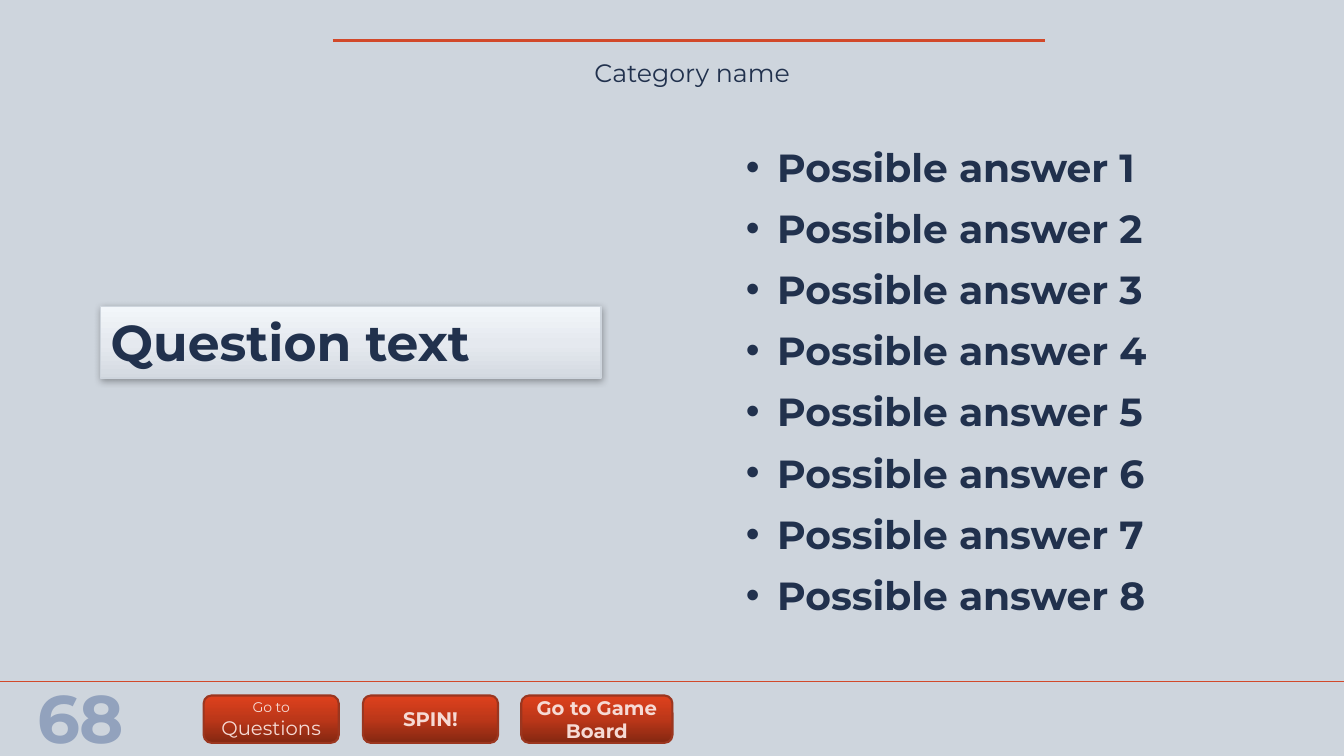
import pptx
import pptx.util
import pptx.dml.color
import pptx.enum.shapes
import pptx.enum.text
import pptx.oxml
import pptx.oxml.ns
from pptx.util import Inches

COLORS = {
    "background": "CED5DD", "rule": "D2492A", "navy": "21314D",
    "number": "92A2BD", "button_text": "F6DAD4", "button_line": "9B361F",
}
BUTTON_STOPS = [(0, "842711"), (50, "BC3719"), (100, "DF411D")]
QUESTION_STOPS = [(0, "D4DAE1"), (48, "E5E9EF"), (100, "F2F6FA")]
NAMESPACE = pptx.oxml.ns.nsdecls("a")
ALIGN = pptx.enum.text.PP_ALIGN
SHAPES = pptx.enum.shapes.MSO_SHAPE


def write_text(shape, lines, size, color="navy", bold=False, align=ALIGN.LEFT,
               anchor=pptx.enum.text.MSO_ANCHOR.TOP, bullet=None, spacing=None):
    """Write paragraphs; a line given as a list holds (text, size) rows."""
    frame = shape.text_frame
    frame.word_wrap = True
    frame.vertical_anchor = anchor
    for index, line in enumerate(lines):
        paragraph = frame.add_paragraph() if index else frame.paragraphs[0]
        paragraph.alignment = align
        if spacing:
            paragraph.line_spacing = spacing
        if bullet:
            properties = paragraph._p.get_or_add_pPr()
            properties.set("marL", str(Inches(0.31)))
            properties.set("indent", str(-Inches(0.31)))
            properties.append(pptx.oxml.parse_xml(f'<a:buFont {NAMESPACE} typeface="Arial"/>'))
            properties.append(pptx.oxml.parse_xml(f'<a:buChar {NAMESPACE} char="{bullet}"/>'))
        rows = line if isinstance(line, list) else [(line, size)]
        for row_index, (text, row_size) in enumerate(rows):
            if row_index:
                paragraph.add_line_break()
            run = paragraph.add_run()
            run.text = text
            run.font.name = "Montserrat"
            run.font.size = pptx.util.Pt(row_size)
            run.font.bold = bold
            run.font.color.rgb = pptx.dml.color.RGBColor.from_string(COLORS[color])


def add_gradient_shape(kind, left, top, width, height, stops, line_color, line_width):
    shape = slide.shapes.add_shape(kind, Inches(left), Inches(top), Inches(width), Inches(height))
    shape.shadow.inherit = False
    shape.fill.gradient()
    shape.fill.gradient_angle = 90
    stop_list = shape._element.spPr.find(".//" + pptx.oxml.ns.qn("a:gsLst"))
    for old_stop in list(stop_list):
        stop_list.remove(old_stop)
    for position, color in stops:
        stop_list.append(pptx.oxml.parse_xml(
            f'<a:gs {NAMESPACE} pos="{position * 1000}"><a:srgbClr val="{color}"/></a:gs>'))
    shape.line.color.rgb = pptx.dml.color.RGBColor.from_string(COLORS[line_color])
    shape.line.width = pptx.util.Pt(line_width)
    return shape


presentation = pptx.Presentation()
presentation.slide_width = Inches(13.33)
presentation.slide_height = Inches(7.5)
slide = presentation.slides.add_slide(presentation.slide_layouts[6])
slide.background.fill.solid()
slide.background.fill.fore_color.rgb = pptx.dml.color.RGBColor.from_string(COLORS["background"])

# Footer and header rules
for left, right, y, width in [(0, 13.33, 6.76, 1), (3.3, 10.36, 0.4, 2)]:
    rule = slide.shapes.add_connector(pptx.enum.shapes.MSO_CONNECTOR.STRAIGHT,
                                      Inches(left), Inches(y), Inches(right), Inches(y))
    rule.line.color.rgb = pptx.dml.color.RGBColor.from_string(COLORS["rule"])
    rule.line.width = pptx.util.Pt(width)
    rule._element.spPr.append(pptx.oxml.parse_xml(f"<a:effectLst {NAMESPACE}/>"))

# Slide number and category
number = slide.shapes.add_textbox(Inches(0.21), Inches(6.66), Inches(1.18), Inches(0.91))
write_text(number, ["68"], 48, color="number", bold=True, align=ALIGN.CENTER)
category = slide.shapes.add_textbox(Inches(3.36), Inches(0.52), Inches(7.01), Inches(0.4))
write_text(category, ["Category name"], 18, align=ALIGN.CENTER)

# Question with soft shadow
question = add_gradient_shape(SHAPES.RECTANGLE, 1, 3.04, 4.96, 0.71,
                              QUESTION_STOPS, "background", 1)
effects = question._element.spPr.find(pptx.oxml.ns.qn("a:effectLst"))
effects.append(pptx.oxml.parse_xml(
    f'<a:outerShdw {NAMESPACE} blurRad="{pptx.util.Pt(5)}" dist="{pptx.util.Pt(1)}" '
    'dir="5400000" rotWithShape="0"><a:srgbClr val="000000">'
    '<a:alpha val="32000"/></a:srgbClr></a:outerShdw>'))
write_text(question, ["Question text"], 36, bold=True)

# Answers
answers = slide.shapes.add_textbox(Inches(7.3), Inches(1.23), Inches(5.12), Inches(4.95))
write_text(answers, [f"Possible answer {index}" for index in range(1, 9)], 28,
           bold=True, bullet="•", spacing=1.3)

# Navigation buttons
buttons = [
    (2.02, 1.34, [("Go to", 10), ("Questions", 14)], False),
    (3.6, 1.34, "SPIN!", True),
    (5.17, 1.5, "Go to Game Board", True),
]
for left, width, label, bold in buttons:
    button = add_gradient_shape(SHAPES.ROUNDED_RECTANGLE, left, 6.9, width, 0.47,
                                BUTTON_STOPS, "button_line", 1.5)
    write_text(button, [label], 14, color="button_text", bold=bold, align=ALIGN.CENTER,
               anchor=pptx.enum.text.MSO_ANCHOR.MIDDLE)

presentation.save("out.pptx")
